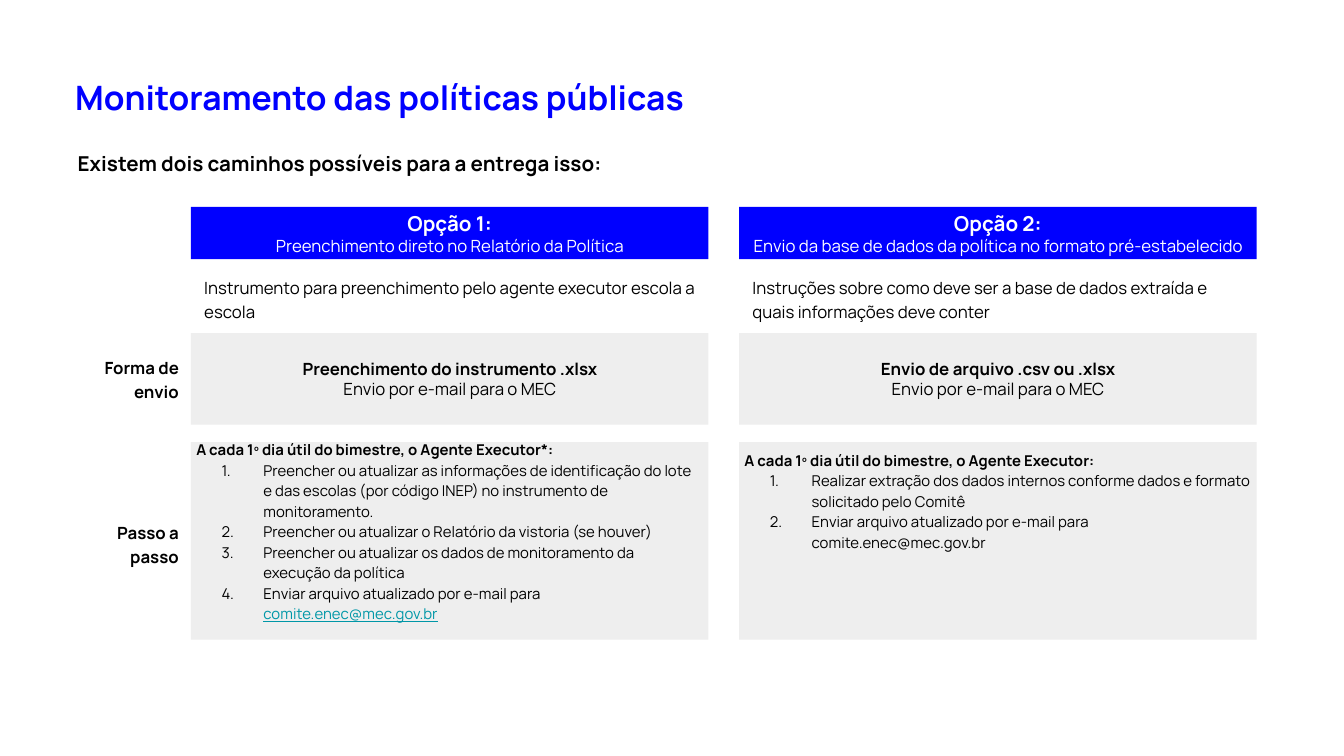
from lxml import etree
from pptx import Presentation
from pptx import util as u
from pptx.dml.color import RGBColor
from pptx.enum import shapes, text
from pptx.oxml.ns import qn

COLORS = {"blue": "0000FF", "white": "FFFFFF", "black": "000000",
          "panel": "EEEEEE", "link": "0097A7"}
FONT = "Manrope"
LOOSE = 1.15
COLUMN_WIDTH = 9.78
EMAIL = "comite.enec@mec.gov.br"

OPTIONS = [
    {"left": 3.61,
     "title": "Opção 1:",
     "subtitle": "Preenchimento direto no Relatório da Política",
     "intro": "Instrumento para preenchimento pelo agente executor escola a escola",
     "format": "Preenchimento do instrumento .xlsx",
     "heading": "A cada 1º dia útil do bimestre, o Agente Executor*:",
     "steps": ["Preencher ou atualizar as informações de identificação do lote e das "
               "escolas (por código INEP) no instrumento de monitoramento.",
               "Preencher ou atualizar o Relatório da vistoria (se houver)",
               "Preencher ou atualizar os dados de monitoramento da execução da política",
               "Enviar arquivo atualizado por e-mail para "],
     "link": EMAIL,
     "bottom": 0.49},
    {"left": 13.97,
     "title": "Opção 2:",
     "subtitle": "Envio da base de dados da política no formato pré-estabelecido",
     "intro": "Instruções sobre como deve ser a base de dados extraída e quais "
              "informações deve conter",
     "format": "Envio de arquivo .csv ou .xlsx",
     "heading": "A cada 1º dia útil do bimestre, o Agente Executor:",
     "steps": ["Realizar extração dos dados internos conforme dados e formato "
               "solicitado pelo Comitê",
               f"Enviar arquivo atualizado por e-mail para {EMAIL}"],
     "link": None,
     "bottom": 1.65},
]


class SlideBuilder:
    def __init__(self, slide):
        self.slide = slide

    def style(self, span, size, color="black", bold=False):
        span.font.name = FONT
        span.font.size = u.Pt(size)
        span.font.bold = bold
        span.font.color.rgb = RGBColor.from_string(COLORS[color])

    def fill_text(self, box, lines, color="black", align=text.PP_ALIGN.LEFT, spacing=1.0):
        """Fill a box with (wording, size, bold) lines, one paragraph each."""
        frame = box.text_frame
        frame.text = "\n".join(wording for wording, _, _ in lines)
        for para, (_, size, bold) in zip(frame.paragraphs, lines):
            para.alignment = align
            para.line_spacing = spacing
            for span in para.runs:
                self.style(span, size, color, bold)

    def set_frame(self, box, insets, anchor):
        """Insets are left and right, top, bottom, in centimetres."""
        frame = box.text_frame
        frame.word_wrap = True
        frame.vertical_anchor = anchor
        side, top, bottom = insets
        frame.margin_left = frame.margin_right = u.Cm(side)
        frame.margin_top, frame.margin_bottom = u.Cm(top), u.Cm(bottom)

    def label(self, area, wording, size, inset=0.25, bold=True,
              anchor=text.MSO_ANCHOR.TOP, **style):
        box = self.slide.shapes.add_textbox(*map(u.Cm, area))
        self.set_frame(box, (inset, inset, inset), anchor)
        self.fill_text(box, [(wording, size, bold)], **style)

    def panel(self, area, fill, lines, insets, **style):
        box = self.slide.shapes.add_shape(shapes.MSO_SHAPE.RECTANGLE, *map(u.Cm, area))
        box.shadow.inherit = False
        box.fill.solid()
        box.fill.fore_color.rgb = RGBColor.from_string(COLORS[fill])
        box.line.fill.background()
        self.set_frame(box, insets, text.MSO_ANCHOR.MIDDLE)
        self.fill_text(box, lines, **style)
        return box

    def number(self, para):
        """Turn a paragraph into an item of a numbered list."""
        props = para._p.get_or_add_pPr()
        props.set("marL", str(u.Cm(1.27)))
        props.set("indent", str(u.Cm(-0.79)))
        color = etree.SubElement(props, qn("a:buClr"))
        etree.SubElement(color, qn("a:srgbClr"), val=COLORS["black"])
        etree.SubElement(props, qn("a:buFont"), typeface=FONT)
        etree.SubElement(props, qn("a:buAutoNum"), type="arabicPeriod")

    def steps(self, area, heading, items, link, bottom):
        lines = [(heading, 8, True)] + [(item, 8, False) for item in items]
        box = self.panel(area, "panel", lines, (0.1, 0.1, bottom), spacing=LOOSE)
        paras = box.text_frame.paragraphs
        for para in paras[1:]:
            self.number(para)
        if link:
            span = paras[-1].add_run()
            span.text = link
            self.style(span, 8, "link")
            span.font.underline = True

    def option(self, option):
        left, center = option["left"], text.PP_ALIGN.CENTER
        self.panel((left, 3.91, COLUMN_WIDTH, 0.99), "blue",
                   [(option["title"], 11, True), (option["subtitle"], 9, False)],
                   (0.1, 0, 0), color="white", align=center)
        self.label((left, 4.95, COLUMN_WIDTH, 1.35), option["intro"], 9,
                   bold=False, spacing=LOOSE)
        self.panel((left, 6.3, COLUMN_WIDTH, 1.73), "panel",
                   [(option["format"], 9, True), ("Envio por e-mail para o MEC", 9, False)],
                   (0.1, 0.1, 0.1), align=center)
        self.steps((left, 8.36, COLUMN_WIDTH, 3.73), option["heading"],
                   option["steps"], option["link"], option["bottom"])


def main():
    deck = Presentation()
    deck.slide_width, deck.slide_height = u.Cm(25.4), u.Cm(14.29)
    page = SlideBuilder(deck.slides.add_slide(deck.slide_layouts[6]))

    page.label((1.24, 1.27, 20.17, 1.14), "Monitoramento das políticas públicas", 18,
               inset=0.18, color="blue")
    page.label((1.22, 2.54, 22.99, 1.04),
               "Existem dois caminhos possíveis para a entrega isso:", 11, spacing=LOOSE)
    for option in OPTIONS:
        page.option(option)
    right = text.PP_ALIGN.RIGHT
    page.label((1.22, 6.58, 2.41, 1.14), "Forma de envio", 9,
               anchor=text.MSO_ANCHOR.MIDDLE, align=right, spacing=LOOSE)
    page.label((1.22, 9.58, 2.41, 1.35), "Passo a passo", 9, align=right, spacing=LOOSE)
    deck.save("out.pptx")


if __name__ == "__main__":
    main()
